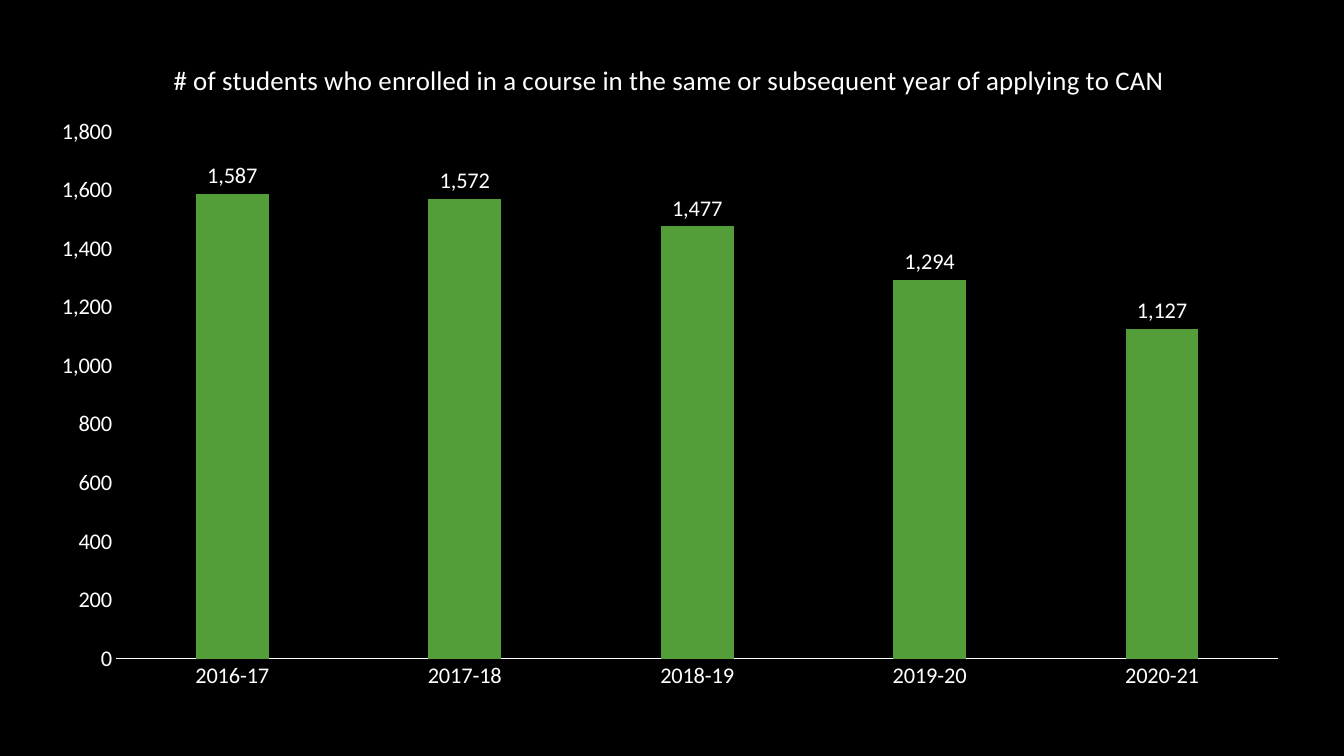
from dataclasses import dataclass

from lxml.etree import SubElement
from pptx import Presentation
from pptx.chart.data import CategoryChartData
from pptx.dml.color import RGBColor
from pptx.enum.chart import XL_CHART_TYPE, XL_LABEL_POSITION, XL_TICK_MARK
from pptx.oxml.ns import qn
from pptx.util import Inches, Pt


@dataclass(frozen=True)
class Theme:
    background: RGBColor = RGBColor(0x00, 0x00, 0x00)
    text: RGBColor = RGBColor(0xFF, 0xFF, 0xFF)
    bar: RGBColor = RGBColor(0x54, 0x9E, 0x39)
    font: str = "Calibri"
    title_size: float = 19.2
    label_size: float = 16
    axis_width: float = 0.75


THEME = Theme()
HEADING = ("# of students who enrolled in a course in the same or "
           "subsequent year of applying to CAN")
ENROLLED = {
    "2016-17": 1587,
    "2017-18": 1572,
    "2018-19": 1477,
    "2019-20": 1294,
    "2020-21": 1127,
}
NUMBER_FORMAT = "#,##0"


def style_font(font, size):
    font.name = THEME.font
    font.size = Pt(size)
    font.bold = False
    font.color.rgb = THEME.text


def place_plot(chart, x, y, w, h):
    plot_area = chart._chartSpace.chart.plotArea
    for old_layout in plot_area.findall(qn("c:layout")):
        plot_area.remove(old_layout)
    layout = SubElement(plot_area, qn("c:layout"))
    plot_area.insert(0, layout)
    manual = SubElement(layout, qn("c:manualLayout"))
    settings = {"layoutTarget": "inner", "xMode": "edge", "yMode": "edge",
                "x": x, "y": y, "w": w, "h": h}
    for tag, value in settings.items():
        SubElement(manual, qn(f"c:{tag}")).set("val", str(value))


def style_axes(chart):
    years, students = chart.category_axis, chart.value_axis
    for axis in (years, students):
        axis.major_tick_mark = XL_TICK_MARK.NONE
        axis.minor_tick_mark = XL_TICK_MARK.NONE
        axis.has_major_gridlines = False
        style_font(axis.tick_labels.font, THEME.label_size)
    years.format.line.color.rgb = THEME.text
    years.format.line.width = Pt(THEME.axis_width)
    students.format.line.fill.background()
    students.minimum_scale = 0
    students.maximum_scale = 1800
    students.major_unit = 200
    students.tick_labels.number_format = NUMBER_FORMAT
    students.tick_labels.number_format_is_linked = False


def style_bars(plot):
    plot.gap_width = 219
    plot.overlap = -27
    plot.vary_by_categories = False
    bars = plot.series[0]
    bars.format.fill.solid()
    bars.format.fill.fore_color.rgb = THEME.bar
    labels = bars.data_labels
    labels.show_value = True
    labels.position = XL_LABEL_POSITION.OUTSIDE_END
    labels.number_format = NUMBER_FORMAT
    labels.number_format_is_linked = False
    style_font(labels.font, THEME.label_size)


def add_enrolment_chart(slide, left, top, width, height):
    enrolment = CategoryChartData(number_format=NUMBER_FORMAT)
    enrolment.categories = list(ENROLLED)
    enrolment.add_series(HEADING, list(ENROLLED.values()))
    chart = slide.shapes.add_chart(
        XL_CHART_TYPE.COLUMN_CLUSTERED, left, top, width, height, enrolment
    ).chart
    style_font(chart.font, THEME.label_size)
    chart.has_legend = False
    chart.has_title = True
    heading = chart.chart_title.text_frame.paragraphs[0].add_run()
    heading.text = HEADING
    style_font(heading.font, THEME.title_size)
    chart.chart_title.include_in_layout = False
    style_axes(chart)
    style_bars(chart.plots[0])
    place_plot(chart, x=0.063, y=0.142, w=0.917, h=0.791)


def build_chart_slide(deck):
    slide = deck.slides.add_slide(deck.slide_layouts[6])
    slide.background.fill.solid()
    slide.background.fill.fore_color.rgb = THEME.background
    add_enrolment_chart(slide, Inches(0.36), Inches(0.37),
                        Inches(12.57), Inches(6.61))


def main():
    deck = Presentation()
    deck.slide_width = Inches(13.33)
    deck.slide_height = Inches(7.5)
    build_chart_slide(deck)
    deck.save("out.pptx")


if __name__ == "__main__":
    main()
